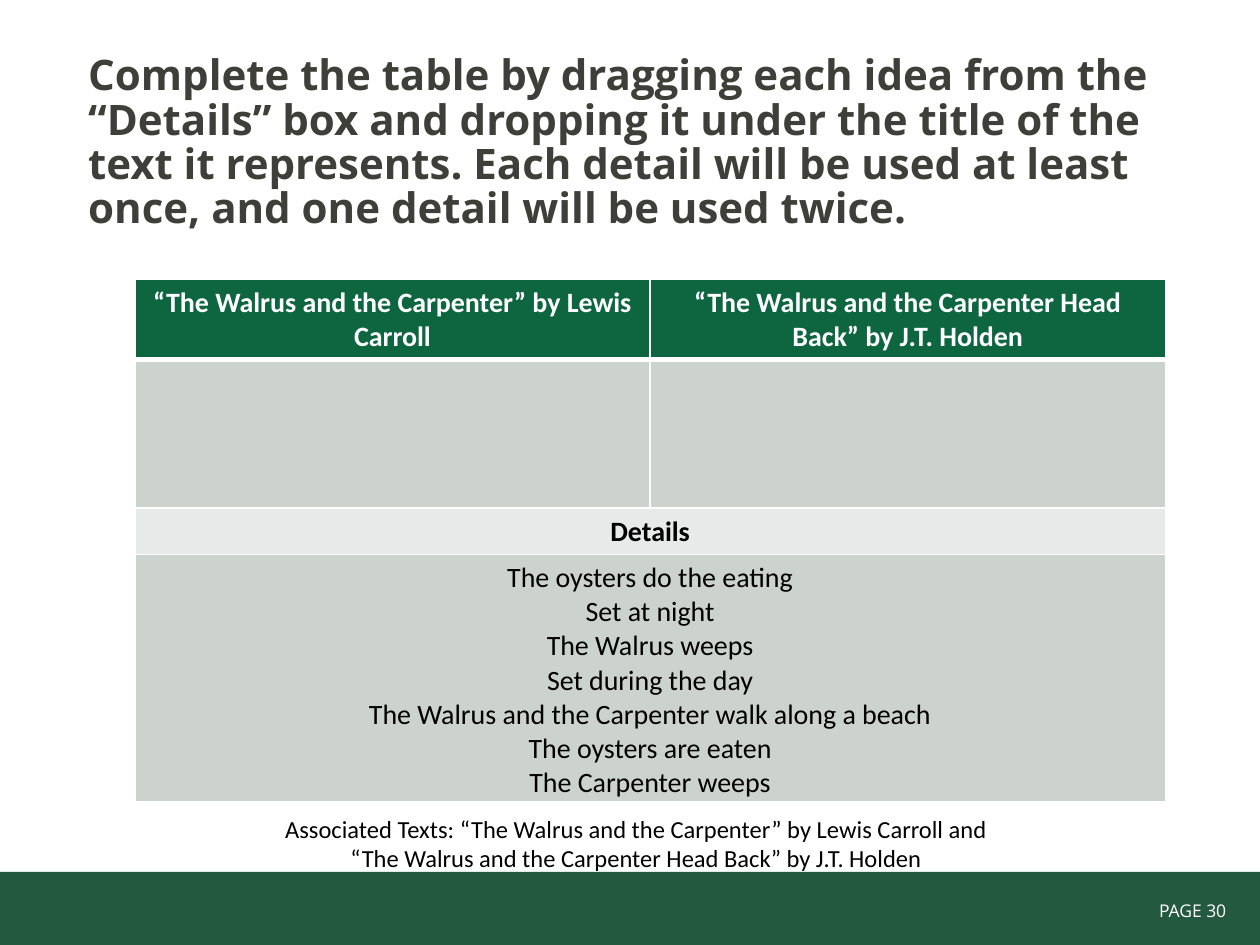
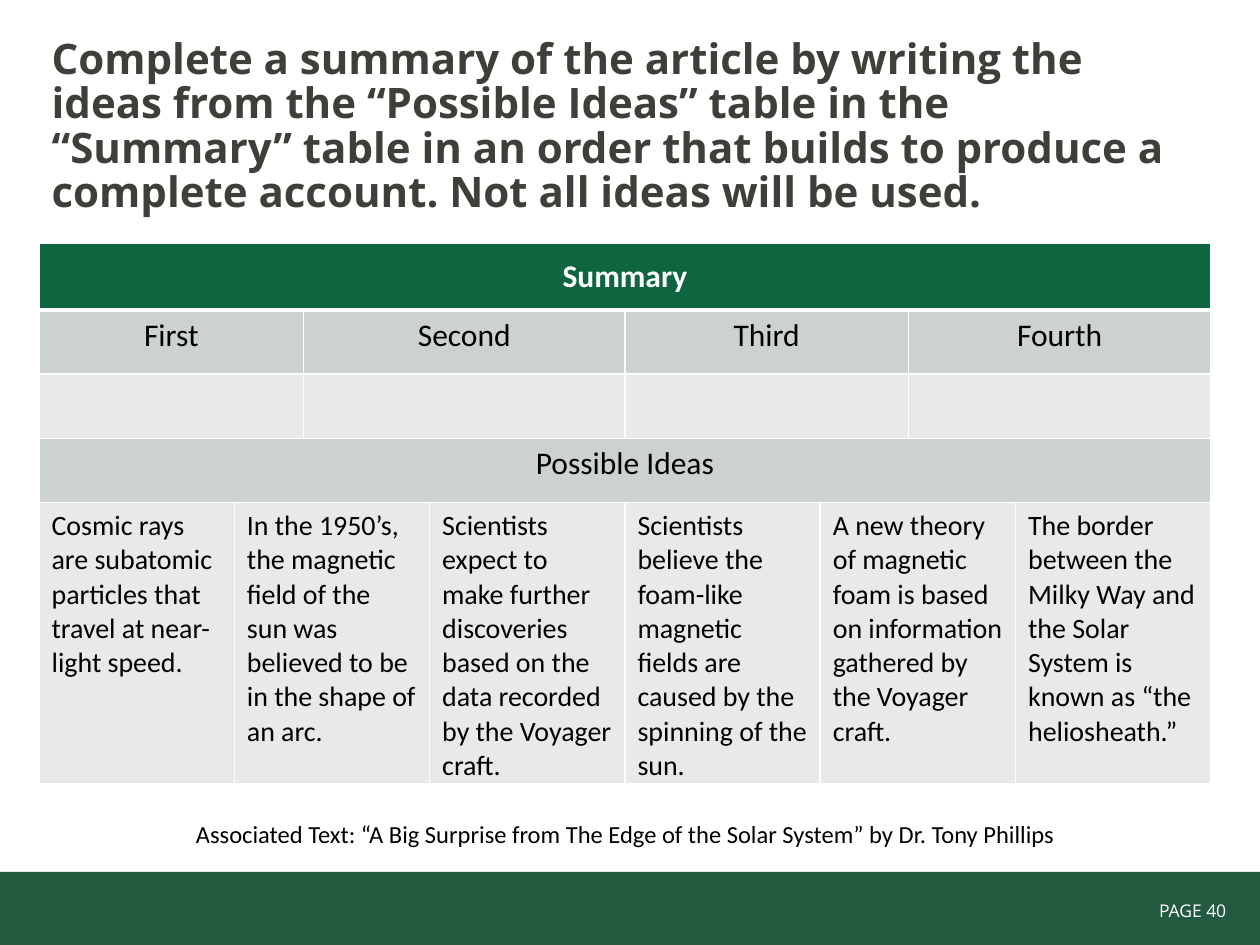
from lxml import etree
from pptx import Presentation
from pptx.dml.color import RGBColor
from pptx.enum.shapes import MSO_SHAPE
from pptx.enum.text import MSO_ANCHOR, MSO_AUTO_SIZE, PP_ALIGN
from pptx.oxml.ns import qn
from pptx.util import Inches, Pt

LEFT, CENTER, RIGHT = PP_ALIGN.LEFT, PP_ALIGN.CENTER, PP_ALIGN.RIGHT
TOP, MIDDLE = MSO_ANCHOR.TOP, MSO_ANCHOR.MIDDLE
RECTANGLE = MSO_SHAPE.RECTANGLE
NO_AUTOFIT = MSO_AUTO_SIZE.NONE

BAND, HEADER, DARK, LIGHT = "23593E", "0E6641", "CCD3CF", "E7EAE9"
HEADING, WHITE, BLACK = "3F3F39", "FFFFFF", "000000"
HEADING_FONT, BODY_FONT = "Open Sans", "Calibri"
TITLE_ONLY = 5


def rgb(value):
    return RGBColor.from_string(value)


def box(*lengths):
    return [Inches(n) for n in lengths]


class Deck:
    def __init__(self):
        self.prs = Presentation()
        self.prs.slide_width, self.prs.slide_height = box(10, 7.5)
        self.s = None

    def slide(self, title, at, page):
        self.s = self.prs.slides.add_slide(self.prs.slide_layouts[TITLE_ONLY])
        self.title(title, at)
        self.band()
        self.text(f"PAGE {page}", (8.28, 7.09, 1.55, 0.27), 10, HEADING_FONT, WHITE, RIGHT)

    def fill_text(self, tf, text, size, font, color, align=CENTER, bold=False):
        tf.text = text
        for p in tf.paragraphs:
            p.alignment = align
            for r in p.runs:
                r.font.size = Pt(size)
                r.font.name = font
                r.font.bold = bold
                r.font.color.rgb = rgb(color)

    def title(self, text, at):
        sp = self.s.shapes.title
        sp.left, sp.top, sp.width, sp.height = box(*at)
        tf = sp.text_frame
        self.fill_text(tf, text, 24, HEADING_FONT, HEADING, LEFT, True)
        tf.word_wrap = True
        tf.auto_size = NO_AUTOFIT
        tf.vertical_anchor = TOP
        p = tf.paragraphs[0]
        p.space_before = Pt(0)
        p.line_spacing = 0.88

    def band(self):
        sp = self.s.shapes.add_shape(RECTANGLE, *box(0, 6.92, 10, 0.58))
        sp.shadow.inherit = False
        sp.fill.solid()
        sp.fill.fore_color.rgb = rgb(BAND)
        sp.line.fill.background()

    def text(self, text, at, size, font, color, align):
        tf = self.s.shapes.add_textbox(*box(*at)).text_frame
        tf.word_wrap = True
        self.fill_text(tf, text, size, font, color, align)

    def caption(self, text, at):
        self.text(text, at, 14, BODY_FONT, BLACK, CENTER)

    def border(self, cell, row):
        widths = {"L": 1, "R": 1, "T": 3 if row == 1 else 1, "B": 3 if row == 0 else 1}
        tc_pr = cell._tc.get_or_add_tcPr()
        for side, width in widths.items():
            ln = etree.SubElement(tc_pr, qn(f"a:ln{side}"), w=str(Pt(width)))
            fill = etree.SubElement(ln, qn("a:solidFill"))
            etree.SubElement(fill, qn("a:srgbClr"), val=WHITE)

    def table(self, left, top, columns, rows):
        height = sum(row["height"] for row in rows)
        frame = self.s.shapes.add_table(
            len(rows), len(columns), *box(left, top, sum(columns), height))
        table = frame.table
        for column, width in zip(table.columns, columns):
            column.width = Inches(width)
        for i, row in enumerate(rows):
            table.rows[i].height = Inches(row["height"])
            for cell in table.rows[i].cells:
                self.border(cell, i)
                cell.fill.solid()
                cell.fill.fore_color.rgb = rgb(row["fill"])
            start = 0
            for text, span in zip(row["texts"], row["spans"]):
                cell = table.cell(i, start)
                if span > 1:
                    cell.merge(table.cell(i, start + span - 1))
                cell.vertical_anchor = row.get("anchor", TOP)
                if text:
                    self.fill_text(cell.text_frame, text, row.get("size", 16), BODY_FONT,
                                   row.get("color", BLACK), row.get("align", CENTER),
                                   row.get("bold", False))
                start += span


def walrus_slide(deck):
    deck.slide(
        "Complete the table by dragging each idea from the “Details” box and dropping it "
        "under the title of the text it represents. Each detail will be used at least once, "
        "and one detail will be used twice.", (0.6, 0.39, 8.9, 6.31), 30)
    details = [
        "The oysters do the eating",
        "Set at night",
        "The Walrus weeps",
        "Set during the day",
        "The Walrus and the Carpenter walk along a beach",
        "The oysters are eaten",
        "The Carpenter weeps",
    ]
    poems = ["“The Walrus and the Carpenter” by Lewis Carroll",
             "“The Walrus and the Carpenter Head Back” by J.T. Holden"]
    deck.table(1.07, 2.22, [4.09] * 2, [
        dict(height=0.59, fill=HEADER, texts=poems, spans=[1, 1], color=WHITE, bold=True),
        dict(height=1.18, fill=DARK, texts=["", ""], spans=[1, 1]),
        dict(height=0.35, fill=LIGHT, texts=["Details"], spans=[2], bold=True),
        dict(height=1.82, fill=DARK, texts=["\n".join(details)], spans=[2]),
    ])
    deck.caption("Associated Texts: " + " and\v".join(poems), (0.6, 6.41, 8.9, 0.57))


def summary_slide(deck):
    deck.slide(
        "Complete a summary of the article by writing the ideas from the “Possible Ideas” "
        "table in the “Summary” table in an order that builds to produce a complete account. "
        "Not all ideas will be used.", (0.31, 0.26, 9.31, 6.44), 40)
    ideas = [
        "Cosmic rays are subatomic particles that travel at near-light speed.",
        "In the 1950’s, the magnetic field of the sun was believed to be in the shape of an arc.",
        "Scientists expect to make further discoveries based on the data recorded by the "
        "Voyager craft.",
        "Scientists believe the foam-like magnetic fields are caused by the spinning of the sun.",
        "A new theory of magnetic foam is based on information gathered by the Voyager craft.",
        "The border between the Milky Way and the Solar System is known as “the heliosheath.”",
    ]
    steps = ["First", "Second", "Third", "Fourth"]
    pairs = [2] * 4
    deck.table(0.31, 1.93, [1.55, 0.55, 1, 1.55, 1.55, 0.7, 0.85, 1.55], [
        dict(height=0.53, fill=HEADER, texts=["Summary"], spans=[8], size=18,
             color=WHITE, bold=True, anchor=MIDDLE),
        dict(height=0.51, fill=DARK, texts=steps, spans=pairs, size=18),
        dict(height=0.51, fill=LIGHT, texts=[""] * 4, spans=pairs),
        dict(height=0.51, fill=DARK, texts=["Possible Ideas"], spans=[8], size=18),
        dict(height=1.75, fill=LIGHT, texts=ideas, spans=[1, 2, 1, 1, 2, 1], align=LEFT),
    ])
    deck.caption("Associated Text: “A Big Surprise from The Edge of the Solar System” "
                 "by Dr. Tony Phillips", (0.31, 6.45, 9.31, 0.34))


def main():
    deck = Deck()
    walrus_slide(deck)
    summary_slide(deck)
    deck.prs.save("out.pptx")


if __name__ == "__main__":
    main()
